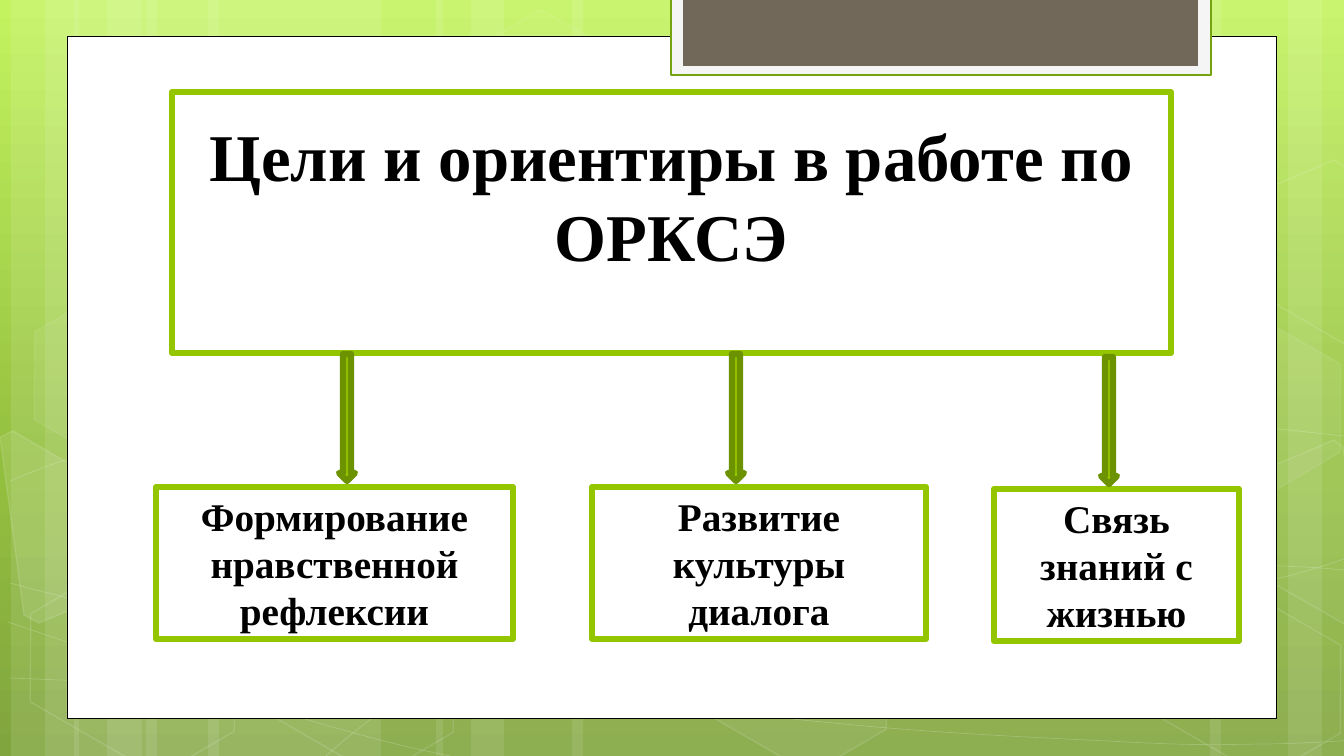
"""Build the slide on the goals of the course: a title box with arrows to three aims."""
from copy import deepcopy
from lxml.etree import SubElement
from pptx import Presentation
from pptx.dml.color import RGBColor
from pptx.enum.shapes import MSO_SHAPE
from pptx.enum.text import MSO_ANCHOR, PP_ALIGN
from pptx.oxml.ns import qn
from pptx.util import Pt

PX = 914400 / 100.8
WHITE, GREEN, DARK = "FFFFFF", "94C600", "6D9200"


def paint(shape, fill=None, line=None, width=1, clear=100, faint=100):
    shape.shadow.inherit = False
    if fill:
        shape.fill.solid()
        shape.fill.fore_color.rgb = RGBColor.from_string(fill)
    else:
        shape.fill.background()
    if line:
        shape.line.color.rgb = RGBColor.from_string(line)
        shape.line.width = Pt(width)
    else:
        shape.line.fill.background()
    for part, alpha in (("a:solidFill", clear), ("a:ln/a:solidFill", faint)):
        if alpha < 100:
            tags = "/".join(qn(tag) for tag in part.split("/"))
            color = shape.element.spPr.find(tags)[0]
            SubElement(color, qn("a:alpha")).set("val", str(alpha * 1000))


def place(kind, *spot):
    return slide.shapes.add_shape(kind, *[round(n * PX) for n in spot])


deck = Presentation()
deck.slide_width, deck.slide_height = round(1344 * PX), round(756 * PX)
slide = deck.slides.add_slide(deck.slide_layouts[6])

back = slide.background.fill
back.gradient()
back.gradient_angle = 270
stops = slide.element.find(".//" + qn("a:gsLst"))
stops.append(deepcopy(stops[0]))
for stop, (at, color) in zip(back.gradient_stops, [(0, "C3F35F"), (0.62, "93BF3F"), (1, "81A53E")]):
    stop.position = at
    stop.color.rgb = RGBColor.from_string(color)

bands = [(146, 235), (11, 68), (45, 112), (208, 235), (74, 68), (107, 112),
         (986, 235), (1288, 68), (1210, 112), (572, 414), (436, 68), (471, 112)]
for left, width in bands:
    paint(place(MSO_SHAPE.RECTANGLE, left, 0, width, 756), WHITE, clear=10)

curves = [
    [(10, 678), (83, 681), (155, 684), (256, 683), (357, 682), (481, 680), (615, 670),
     (750, 660), (940, 641), (1063, 622), (1186, 603), (1312, 573), (1354, 555)],
    [(10, 481), (48, 465), (87, 450), (163, 434), (240, 419), (348, 397), (467, 390),
     (587, 383), (730, 382), (879, 390), (1026, 398), (1273, 429), (1354, 437)],
    [(8, 622), (170, 677), (333, 733), (450, 756)],
    [(10, 583), (51, 594), (94, 605), (172, 621), (250, 637), (367, 661), (479, 678),
     (591, 696), (733, 714), (844, 724), (955, 735), (1075, 739), (1146, 743),
     (1217, 746), (1235, 744), (1270, 744), (1304, 743), (1329, 742), (1354, 740)],
    [(326, 756), (350, 735), (373, 715), (406, 697), (438, 678), (484, 658), (521, 644),
     (558, 630), (582, 624), (631, 614), (680, 604), (770, 590), (817, 583),
     (865, 576), (872, 577), (913, 574), (956, 571), (1021, 569), (1067, 566),
     (1114, 565), (1191, 566), (1191, 566), (1221, 566), (1250, 566), (1280, 566),
     (1305, 567), (1327, 568), (1340, 570), (1352, 569), (1348, 570), (1352, 571)],
]
for dots in curves:
    pen = slide.shapes.build_freeform(*dots[0], scale=PX)
    pen.add_line_segments(dots[1:], close=False)
    curve = pen.convert_to_shape()
    trace = curve.element.find(".//" + qn("a:path"))
    steps = trace.findall(qn("a:lnTo"))
    for first, second, third in zip(steps[::3], steps[1::3], steps[2::3]):
        bend = SubElement(trace, qn("a:cubicBezTo"))
        for step in (first, second, third):
            bend.append(step[0])
            trace.remove(step)
    paint(curve, line=WHITE, width=0.5, faint=20)

hexes = [(449, 36, 4, 8), (667, 594, 6, 12), (15, 596, 0, 12), (19, 314, 7, 8),
         (234, 597, 0, 12), (1121, 598, 0, 12), (1121, 317, 7, 8)]
for left, top, clear, faint in hexes:
    cell = place(MSO_SHAPE.HEXAGON, left, top, 235, 153)
    cell.adjustments[0] = 0.285
    cell.rotation = 30
    paint(cell, WHITE if clear else None, WHITE, 1, clear or 100, faint)

shards = [
    (10, [(0, 437), (13, 431), (116, 491), (128, 586), (39, 623), (24, 615)]),
    (4, [(1245, 478), (1334, 440), (1343, 447), (1368, 630), (1360, 633), (1257, 574)]),
    (0, [(1245, 198), (1334, 160), (1344, 166), (1368, 349), (1360, 353), (1257, 293)]),
]
for clear, dots in shards:
    pen = slide.shapes.build_freeform(*dots[0], scale=PX)
    pen.add_line_segments(dots[1:])
    paint(pen.convert_to_shape(), WHITE if clear else None, WHITE, 1, clear or 100, 12)

paint(place(MSO_SHAPE.RECTANGLE, 67, 36, 1209, 682), WHITE, "000000", 0.5)
paint(place(MSO_SHAPE.RECTANGLE, 671, -2, 540, 77), "F5F5F5", "74A510", 1.25)
paint(place(MSO_SHAPE.RECTANGLE, 683, -2, 515, 68), "71685A")

boxes = [
    ("Цели и ориентиры в работе по ОРКСЭ", 172, 92, 999, 261, 47.7, 78),
    ("Формирование нравственной рефлексии", 156, 487, 357, 152, 28, 5),
    ("Развитие культуры диалога", 592, 487, 334, 152, 28, 5),
    ("Связь знаний с жизнью", 994, 489, 245, 152, 28, 5),
]
for text, left, top, width, height, size, foot in boxes:
    box = place(MSO_SHAPE.RECTANGLE, left, top, width, height)
    paint(box, WHITE, GREEN, 4.5)
    frame = box.text_frame
    frame.text = text
    frame.word_wrap = True
    frame.margin_bottom = round(foot * PX)
    frame.vertical_anchor = MSO_ANCHOR.BOTTOM if foot > 5 else MSO_ANCHOR.MIDDLE
    line = frame.paragraphs[0]
    line.alignment = PP_ALIGN.CENTER
    font = line.runs[0].font
    font.name, font.size, font.bold = "Times New Roman", Pt(size), True
    font.color.rgb = RGBColor.from_string("000000")

for left, top in [(728, 354), (339, 354), (1101, 357)]:
    paint(place(MSO_SHAPE.DOWN_ARROW, left, top, 16, 127), GREEN, DARK, 4.5)

deck.save("out.pptx")
